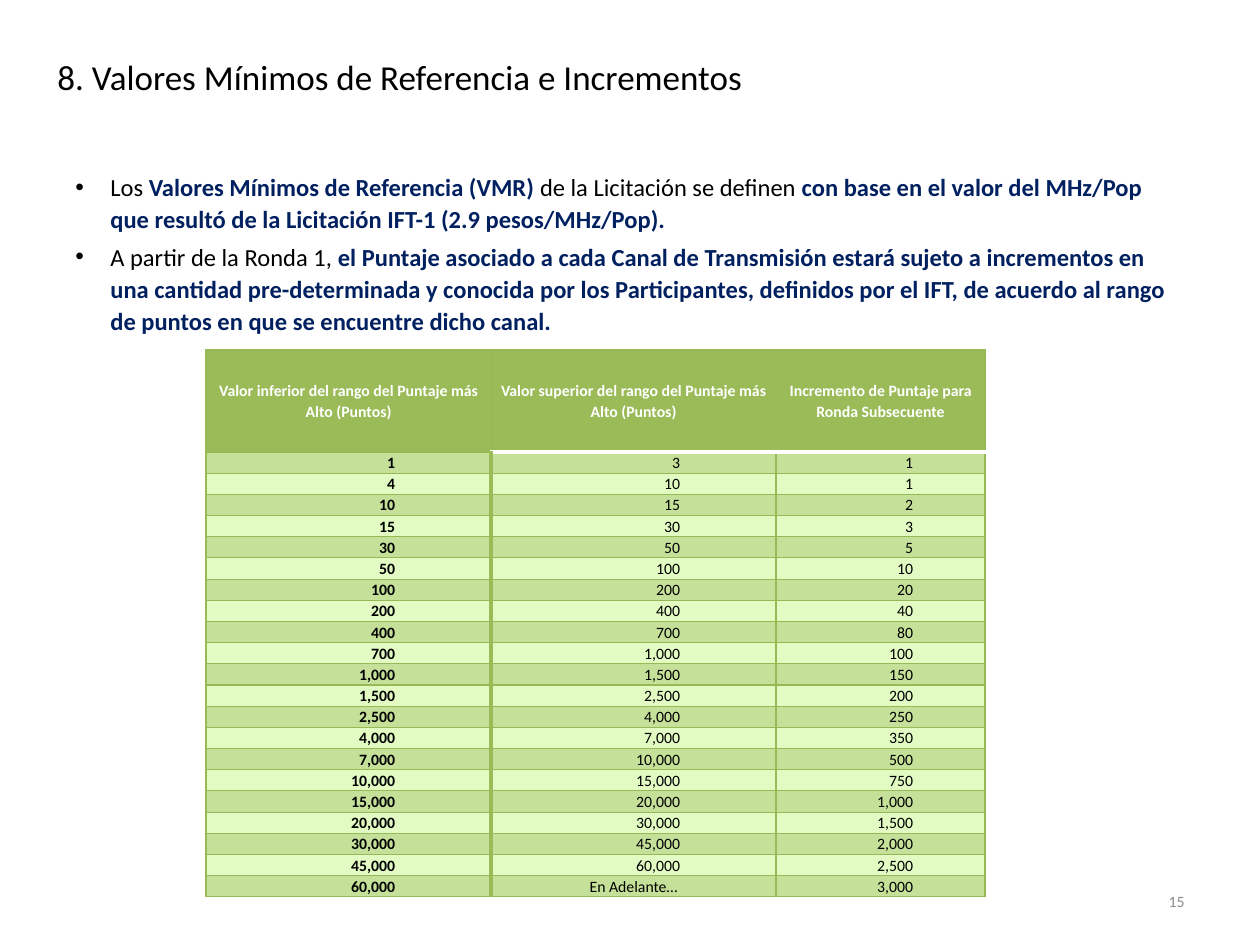
"""Slide of minimum reference values and score increments per range."""
from lxml.etree import SubElement
from pptx import Presentation
from pptx.dml.color import RGBColor
from pptx.enum.text import MSO_ANCHOR, PP_ALIGN
from pptx.oxml.ns import qn
from pptx.util import Pt

COLORS = {"black": "000000", "navy": "002060", "gray": "8C8C8C", "white": "FFFFFF",
          "header": "9BBB59", "rule": "98B955", "dark": "C5E199", "light": "E1FBC3"}
TITLE = "8. Valores Mínimos de Referencia e Incrementos"
BULLETS = [
    [("Los ", False), ("Valores Mínimos de Referencia (VMR) ", True),
     ("de la Licitación se definen ", False),
     ("con base en el valor del MHz/Pop que resultó de la Licitación IFT-1 "
      "(2.9 pesos/MHz/Pop).", True)],
    [("A partir de la Ronda 1, ", False),
     ("el Puntaje asociado a cada Canal de Transmisión estará sujeto a incrementos en "
      "una cantidad pre-determinada y conocida por los Participantes, definidos por el "
      "IFT, de acuerdo al rango de puntos en que se encuentre dicho canal.", True)],
]
PAGE = "15"
HEADERS = ["Valor inferior del rango del Puntaje más Alto (Puntos)",
           "Valor superior del rango del Puntaje más Alto (Puntos)",
           "Incremento de Puntaje para Ronda Subsecuente"]
OPEN_END = "En Adelante…"
LOWER_LIMITS = [1, 4, 10, 15, 30, 50, 100, 200, 400, 700, 1000, 1500, 2500, 4000, 7000,
                10000, 15000, 20000, 30000, 45000, 60000]
UPPER_LIMITS = [3] + LOWER_LIMITS[2:] + [OPEN_END]
INCREMENTS = [1, 1, 2, 3, 5, 10, 20, 40, 80, 100, 150, 200, 250, 350, 500, 750,
              1000, 1500, 2000, 2500, 3000]

TITLE_BOX = (45, 0, 1134, 154)
BULLETS_BOX = (63, 163, 1134, 193)
PAGE_BOX = (903, 876, 294, 50)
TABLE_LEFT, TABLE_TOP = 206, 350
COLUMN_WIDTHS = [285, 285, 209]
NUMBER_MARGINS = [96, 96, 72]
HEADER_HEIGHT, BODY_HEIGHT = 102, 445
CELL_INSET, BULLET_INDENT = 6, 35


def px(length):
    return round(length * 914400 / 126)


def apply(target, values):
    for name, value in values.items():
        setattr(target, name, value)


def add_run(paragraph, text, size, color, bold=False):
    run = paragraph.add_run()
    run.text = text
    apply(run.font, {"name": "Calibri", "size": Pt(size), "bold": bold})
    run.font.color.rgb = RGBColor.from_string(COLORS[color])


def add_frame(slide, box, anchor):
    frame = slide.shapes.add_textbox(*map(px, box)).text_frame
    apply(frame, {"word_wrap": True, "vertical_anchor": anchor})
    return frame


def add_bullets(frame):
    for index, parts in enumerate(BULLETS):
        paragraph = frame.add_paragraph() if index else frame.paragraphs[0]
        apply(paragraph, {"line_spacing": 1.1, "space_before": Pt(2.8 if index else 0)})
        properties = paragraph._p.get_or_add_pPr()
        properties.set("marL", str(px(BULLET_INDENT)))
        properties.set("indent", str(-px(BULLET_INDENT)))
        SubElement(properties, qn("a:buFont"), typeface="Arial")
        SubElement(properties, qn("a:buChar"), char="•")
        for text, key in parts:
            add_run(paragraph, text, 14, "navy" if key else "black", key)


def add_borders(cell, row, column):
    properties = cell._tc.get_or_add_tcPr()
    rule, divider, underline = ("rule", 0.75), ("header", 2), ("white", 2)
    edges = {
        "lnL": divider if row and column == 1 else rule,
        "lnR": divider if row and column == 0 else rule,
        "lnT": underline if row == 1 and column else rule,
        "lnB": underline if row == 0 and column else rule,
    }
    for tag, (color, width) in edges.items():
        line = SubElement(properties, qn(f"a:{tag}"), w=str(Pt(width)))
        fill = SubElement(line, qn("a:solidFill"))
        SubElement(fill, qn("a:srgbClr"), val=COLORS[color])


def fill_cell(cell, row, column, value):
    numeric = isinstance(value, int)
    apply(cell, {
        "margin_left": px(CELL_INSET),
        "margin_right": px(NUMBER_MARGINS[column] if numeric else CELL_INSET),
        "margin_top": 0, "margin_bottom": 0, "vertical_anchor": MSO_ANCHOR.MIDDLE})
    add_borders(cell, row, column)
    cell.fill.solid()
    shade = ("dark" if row % 2 else "light") if row else "header"
    cell.fill.fore_color.rgb = RGBColor.from_string(COLORS[shade])
    paragraph = cell.text_frame.paragraphs[0]
    apply(paragraph, {"line_spacing": 1.07,
                      "alignment": PP_ALIGN.RIGHT if numeric else PP_ALIGN.CENTER})
    add_run(paragraph, f"{value:,}" if numeric else value, 9,
            "black" if row else "white", row == 0 or column == 0)


def add_ranges(slide):
    rows = [HEADERS, *zip(LOWER_LIMITS, UPPER_LIMITS, INCREMENTS)]
    box = (TABLE_LEFT, TABLE_TOP, sum(COLUMN_WIDTHS), HEADER_HEIGHT + BODY_HEIGHT)
    table = slide.shapes.add_table(len(rows), len(HEADERS), *map(px, box)).table
    table.horz_banding = False
    for column, width in zip(table.columns, COLUMN_WIDTHS):
        column.width = px(width)
    for row, values in enumerate(rows):
        height = BODY_HEIGHT / len(LOWER_LIMITS) if row else HEADER_HEIGHT
        table.rows[row].height = px(height)
        for column, value in enumerate(values):
            fill_cell(table.cell(row, column), row, column, value)


def main():
    deck = Presentation()
    apply(deck, {"slide_width": px(1260), "slide_height": px(945)})
    slide = deck.slides.add_slide(deck.slide_layouts[6])
    title = add_frame(slide, TITLE_BOX, MSO_ANCHOR.MIDDLE)
    add_run(title.paragraphs[0], TITLE, 20, "black")
    add_bullets(add_frame(slide, BULLETS_BOX, MSO_ANCHOR.TOP))
    page = add_frame(slide, PAGE_BOX, MSO_ANCHOR.MIDDLE).paragraphs[0]
    page.alignment = PP_ALIGN.RIGHT
    add_run(page, PAGE, 9, "gray")
    add_ranges(slide)
    deck.save("out.pptx")


if __name__ == "__main__":
    main()
